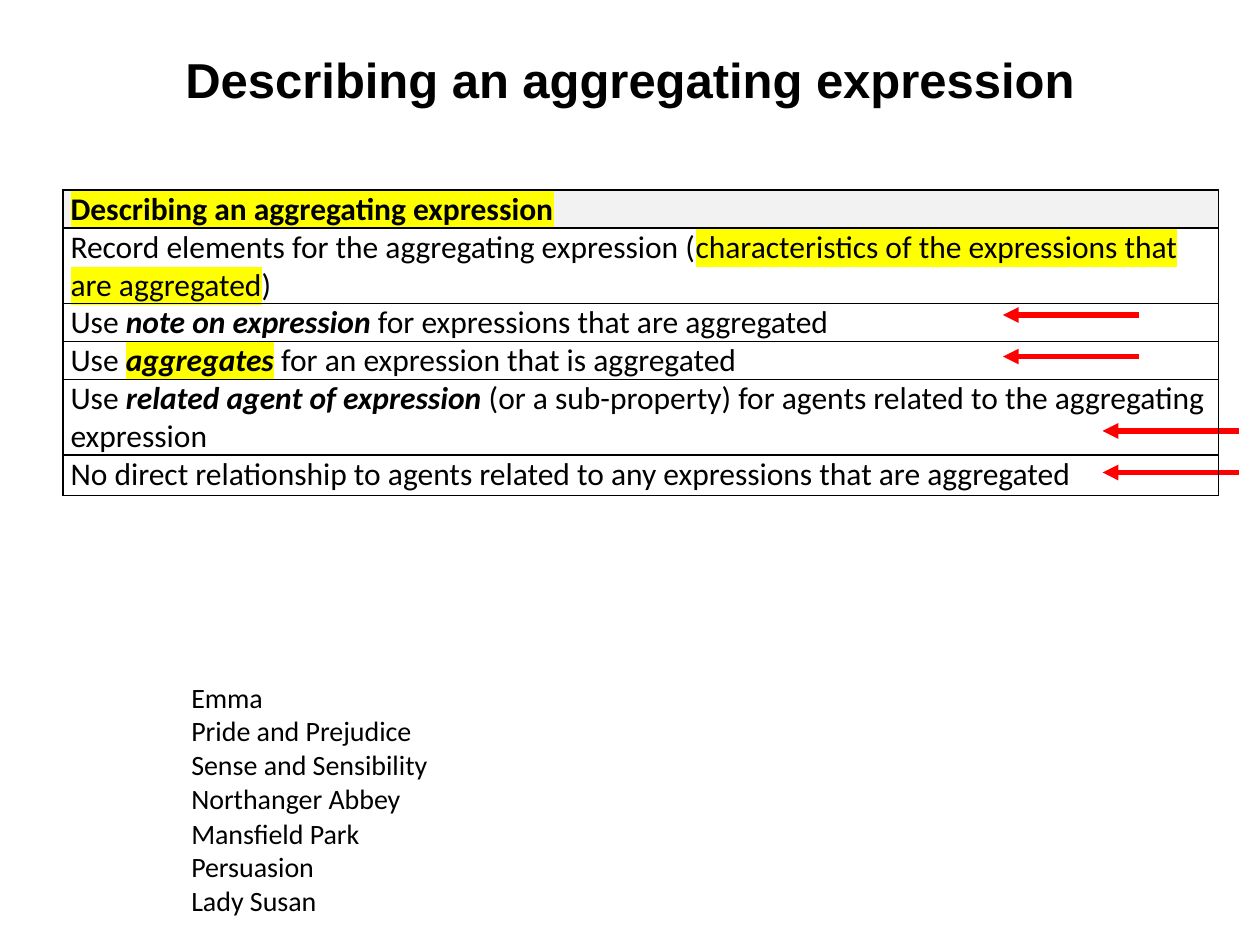
from dataclasses import dataclass

from lxml import etree
from pptx import Presentation
from pptx.dml.color import RGBColor
from pptx.enum.shapes import MSO_CONNECTOR as Connector
from pptx.enum.text import MSO_ANCHOR as Anchor, PP_ALIGN as Align
from pptx.oxml import parse_xml
from pptx.oxml.ns import nsdecls, qn
from pptx.util import Inches, Pt


@dataclass(frozen=True)
class Theme:
    ink: str = "000000"
    arrow: str = "FF0000"
    marker: str = "FFFF00"
    header: str = "F2F2F2"
    title_font: str = "Arial"
    body_font: str = "Calibri"
    title_size: int = 28
    table_size: int = 18
    list_size: int = 16


THEME = Theme()
BOLD = {"bold": True}
TERM = {"bold": True, "italic": True}
MARKED = {"highlight": True}

# Each row: height, then runs of text and format
ROWS = [
    (0.3, [("Describing an aggregating expression", BOLD | MARKED)]),
    (0.6, [("Record elements for the aggregating expression (", {}),
           ("characteristics of the expressions that are aggregated", MARKED),
           (")", {})]),
    (0.3, [("Use ", {}), ("note on expression ", TERM),
           ("for expressions that are aggregated", {})]),
    (0.3, [("Use ", {}), ("aggregates", TERM | MARKED),
           (" for an expression that is aggregated", {})]),
    (0.6, [("Use ", {}), ("related agent of expression", TERM),
           (" (or a sub-property) for agents related to the aggregating expression", {})]),
    (0.32, [("No direct relationship to agents related to any expressions "
             "that are aggregated", {})]),
]
NOVELS = [
    (6.43, 1.94, 0.91, ["Mansfield Park", "Persuasion", "Lady Susan"]),
    (5.35, 2.15, 1.18, ["Emma", "Pride and Prejudice", "Sense and Sensibility",
                        "Northanger Abbey"]),
]
ARROW_TIPS = [(8.75, 3.42), (8.75, 3.75), (7.96, 2.5), (7.96, 2.83)]
ARROW_LENGTH = 1.08


def add_run(paragraph, text, size, font=THEME.body_font, highlight=False, **values):
    run = paragraph.add_run()
    run.text = text
    for name, value in ({"name": font, "size": Pt(size)} | values).items():
        setattr(run.font, name, value)
    run.font.color.rgb = RGBColor.from_string(THEME.ink)
    if highlight:
        run.font.fill._xPr.find(qn("a:solidFill")).addnext(parse_xml(
            f'<a:highlight {nsdecls("a")}><a:srgbClr val="{THEME.marker}"/></a:highlight>'))


def add_text(slide, box, lines, align=Align.LEFT, anchor=Anchor.TOP, **run_format):
    frame = slide.shapes.add_textbox(*map(Inches, box)).text_frame
    frame.word_wrap = True
    frame.vertical_anchor = anchor
    for index, line in enumerate(lines):
        paragraph = frame.add_paragraph() if index else frame.paragraphs[0]
        paragraph.alignment = align
        add_run(paragraph, line, **run_format)


def add_arrow(slide, left, top):
    """A horizontal arrow that points left."""
    arrow = slide.shapes.add_connector(
        Connector.STRAIGHT, Inches(left), Inches(top),
        Inches(left + ARROW_LENGTH), Inches(top))
    arrow.line.color.rgb = RGBColor.from_string(THEME.arrow)
    arrow.line.width = Pt(3)
    etree.SubElement(arrow.line._get_or_add_ln(), qn("a:headEnd"), type="triangle")
    etree.SubElement(arrow._element.spPr, qn("a:effectLst"))


def add_borders(cell):
    properties = cell._tc.get_or_add_tcPr()
    for index, side in enumerate("LRTB"):
        properties.insert(index, parse_xml(
            f'<a:ln{side} {nsdecls("a")} w="{Pt(1)}"><a:solidFill>'
            f'<a:srgbClr val="{THEME.ink}"/></a:solidFill></a:ln{side}>'))


def add_rules_table(slide):
    height = sum(row_height for row_height, _ in ROWS)
    table = slide.shapes.add_table(
        len(ROWS), 1, Inches(0.5), Inches(1.51), Inches(9.17), Inches(height)).table
    table.horz_banding = False
    for index, (row_height, runs) in enumerate(ROWS):
        table.rows[index].height = Inches(row_height)
        cell = table.cell(index, 0)
        margins = {"margin_left": 0.06, "margin_right": 0.06,
                   "margin_top": 0, "margin_bottom": 0}
        for name, value in margins.items():
            setattr(cell, name, Inches(value))
        if index == 0:
            cell.fill.solid()
            cell.fill.fore_color.rgb = RGBColor.from_string(THEME.header)
        else:
            cell.fill.background()
        add_borders(cell)
        for text, run_format in runs:
            values = {"bold": False, "italic": False} | run_format
            add_run(cell.text_frame.paragraphs[0], text, THEME.table_size, **values)


def main():
    presentation = Presentation()
    presentation.slide_width = Inches(10)
    presentation.slide_height = Inches(7.5)
    slide = presentation.slides.add_slide(presentation.slide_layouts[6])

    # Title
    add_text(slide, (0, 0, 10, 1.25), ["Describing an aggregating expression"],
             Align.CENTER, Anchor.MIDDLE,
             size=THEME.title_size, font=THEME.title_font, bold=True)

    # Novels in the aggregate
    for top, width, height, titles in NOVELS:
        add_text(slide, (1.42, top, width, height), titles, size=THEME.list_size)

    # Arrows, with the table in front
    for left, top in ARROW_TIPS:
        add_arrow(slide, left, top)
    add_rules_table(slide)

    presentation.save("out.pptx")


if __name__ == "__main__":
    main()
